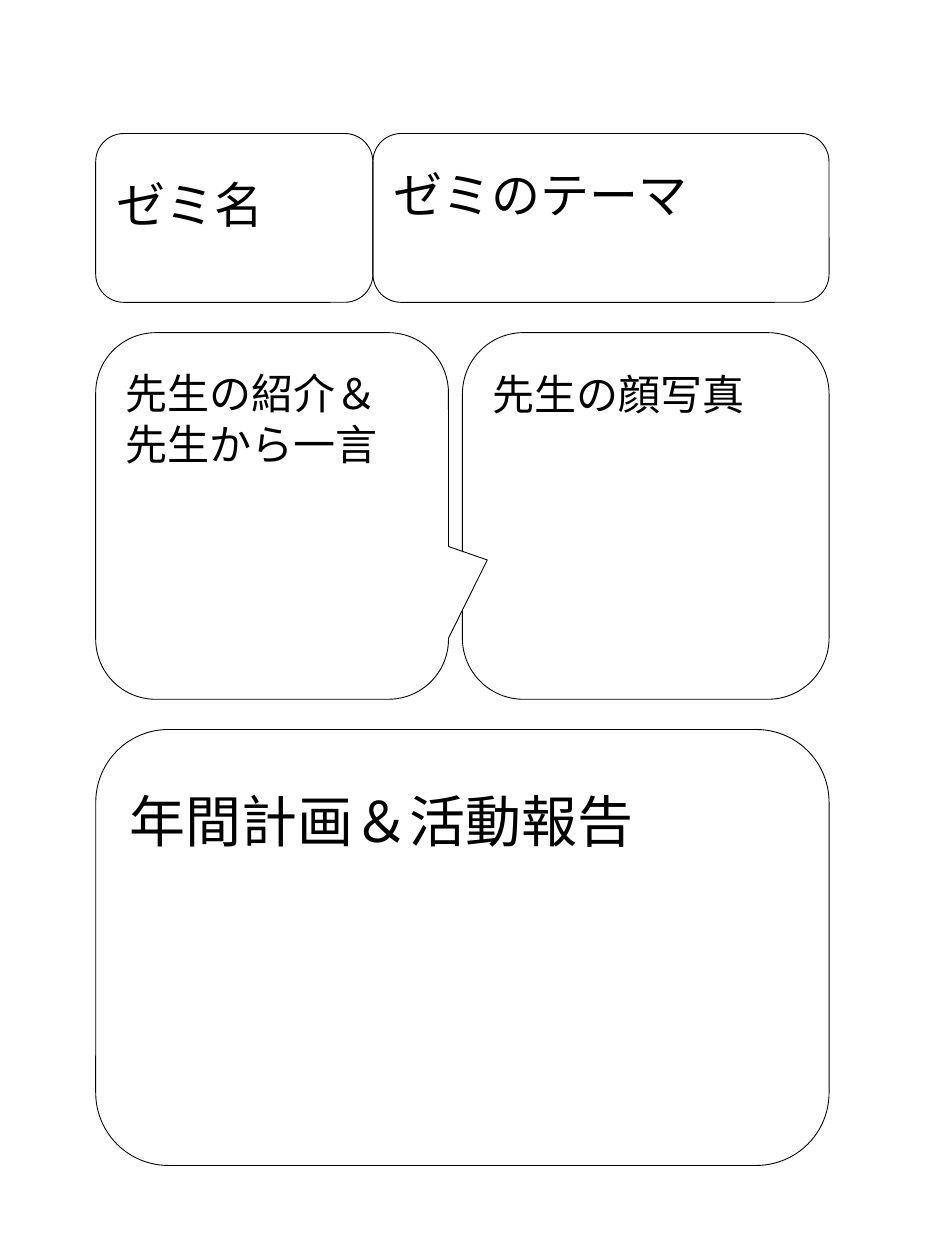
from lxml.etree import SubElement
from pptx import Presentation
from pptx.dml.color import RGBColor
from pptx.enum.shapes import MSO_SHAPE
from pptx.enum.text import MSO_ANCHOR, PP_ALIGN
from pptx.oxml.ns import qn
from pptx.util import Inches, Pt

FONT = "Noto Sans CJK JP"
INK, PAPER = "000000", "FFFFFF"
LEFT, RIGHT = 0.76, 6.58
HEADER_TOP, TEACHER_TOP, PLAN_TOP = 1.06, 2.64, 5.79
HEADER_H, TEACHER_H, PLAN_H = 1.34, 2.91, 3.46
THEME_LEFT, PHOTO_LEFT = 2.96, 3.67
INTRO_W = 2.8


def color(value):
    """Turn a hex string into a colour."""
    return RGBColor.from_string(value)


def add_lines(sp, lines, size, top):
    """Write left-aligned lines that start a given margin below the top."""
    tf = sp.text_frame
    frame = {"word_wrap": True, "vertical_anchor": MSO_ANCHOR.TOP,
             "margin_left": Inches(0.1), "margin_right": Inches(0.1),
             "margin_top": Inches(top), "margin_bottom": Inches(0.05)}
    for name, value in frame.items():
        setattr(tf, name, value)
    for i, line in enumerate(lines):
        p = tf.add_paragraph() if i else tf.paragraphs[0]
        p.alignment = PP_ALIGN.LEFT
        p.line_spacing = Pt(size * 1.2)
        r = p.add_run()
        r.text = line
        for name, value in {"size": Pt(size), "name": FONT}.items():
            setattr(r.font, name, value)
        r.font.color.rgb = color(INK)
        SubElement(r.font._element, qn("a:ea"), typeface=FONT)


def add_panel(s, box, lines, size, top, kind=MSO_SHAPE.ROUNDED_RECTANGLE):
    """Add an outlined panel with its heading."""
    sp = s.shapes.add_shape(kind, *(Inches(v) for v in box))
    sp.shadow.inherit = False
    sp.fill.background()
    sp.line.color.rgb = color(INK)
    sp.line.width = Pt(0.5)
    add_lines(sp, lines, size, top)
    return sp


def add_callout(s, box, lines, size, top, tail):
    """Add a filled speech panel whose tail follows the adjustments."""
    sp = add_panel(s, box, lines, size, top,
                   MSO_SHAPE.ROUNDED_RECTANGULAR_CALLOUT)
    sp.fill.solid()
    sp.fill.fore_color.rgb = color(PAPER)
    for i, value in enumerate(tail):
        sp.adjustments[i] = value


def main():
    """Build the seminar introduction sheet."""
    prs = Presentation()
    prs.slide_width, prs.slide_height = Inches(7.5), Inches(10)
    s = prs.slides.add_slide(prs.slide_layouts[6])
    add_panel(s, (LEFT, HEADER_TOP, THEME_LEFT - LEFT, HEADER_H),
              ["ゼミ名"], 28, 0.26)
    add_panel(s, (THEME_LEFT, HEADER_TOP, RIGHT - THEME_LEFT, HEADER_H),
              ["ゼミのテーマ"], 28, 0.18)
    add_panel(s, (PHOTO_LEFT, TEACHER_TOP, RIGHT - PHOTO_LEFT, TEACHER_H),
              ["先生の顔写真"], 24, 0.14)
    add_callout(s, (LEFT, TEACHER_TOP, INTRO_W, TEACHER_H),
                ["先生の紹介＆", "先生から一言"], 24, 0.14,
                (0.61, 0.12, 0.17))
    add_panel(s, (LEFT, PLAN_TOP, RIGHT - LEFT, PLAN_H),
              ["年間計画＆活動報告"], 32, 0.28)
    prs.save("out.pptx")


if __name__ == "__main__":
    main()
